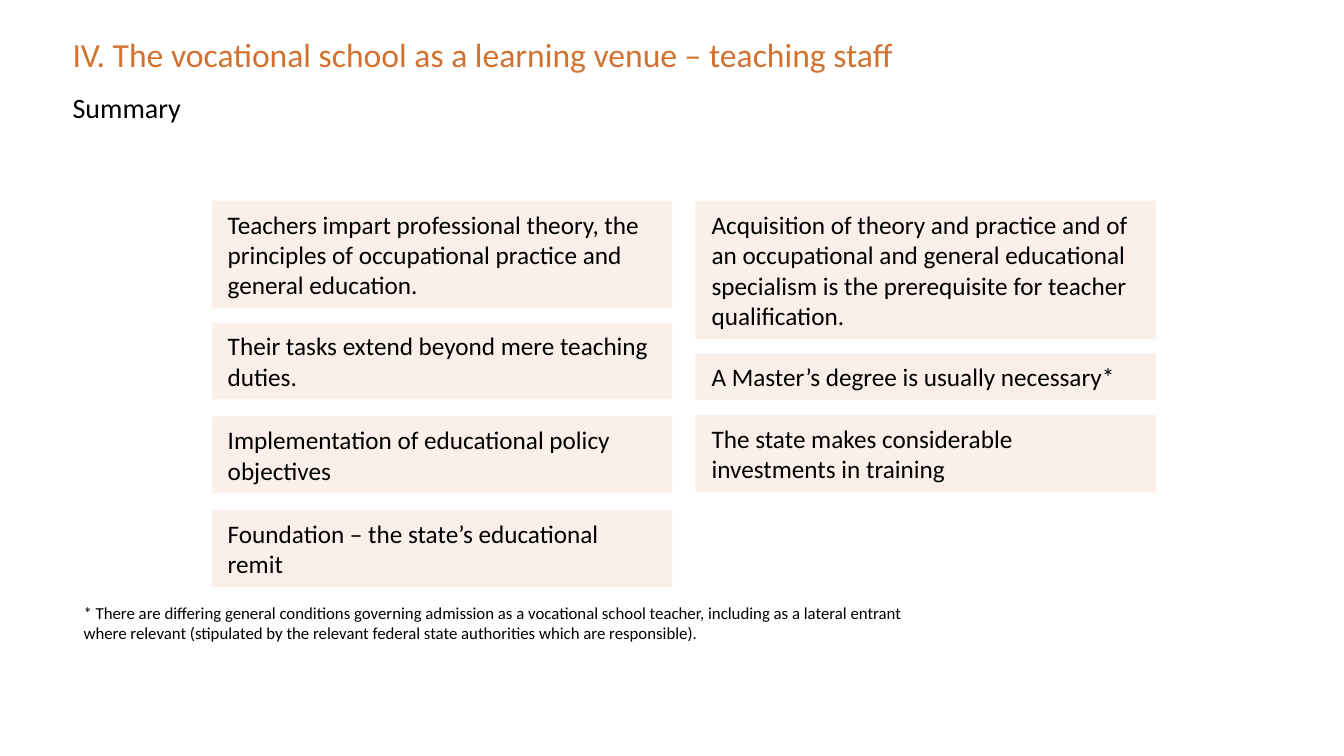
from dataclasses import dataclass

from pptx import Presentation
from pptx.dml.color import RGBColor
from pptx.enum.shapes import MSO_SHAPE
from pptx.enum.text import MSO_ANCHOR, MSO_AUTO_SIZE, PP_ALIGN
from pptx.oxml.ns import qn
from pptx.shapes.autoshape import Shape
from pptx.slide import Slide
from pptx.util import Pt
from lxml.etree import SubElement

ORANGE = "D37230"
BLACK = "000000"
TINT_ALPHA = 10  # percent
CARD_WIDTH = 329
CARD_PADDING = 11  # top and bottom together
LINE_HEIGHT = 22
LEFT_COLUMN, RIGHT_COLUMN = 151.2, 496.8


@dataclass
class Card:
    left: float
    top: float
    lines: int
    text: str

    @property
    def height(self) -> float:
        return CARD_PADDING + LINE_HEIGHT * self.lines


CARDS = [
    Card(LEFT_COLUMN, 143.3, 3, "Teachers impart professional theory, the principles of "
         "occupational practice and general education."),
    Card(LEFT_COLUMN, 230.4, 2, "Their tasks extend beyond mere teaching duties."),
    Card(LEFT_COLUMN, 297.4, 2, "Implementation of educational policy objectives"),
    Card(LEFT_COLUMN, 364.4, 2, "Foundation – the state’s educational remit"),
    Card(RIGHT_COLUMN, 143.3, 4, "Acquisition of theory and practice and of an occupational and "
         "general educational specialism is the prerequisite for teacher qualification."),
    Card(RIGHT_COLUMN, 252.7, 1, "A Master’s degree is usually necessary*"),
    Card(RIGHT_COLUMN, 296.6, 2, "The state makes considerable investments in training"),
]


def color(value: str) -> RGBColor:
    return RGBColor.from_string(value)


def write(box: Shape, text: str, size: float, ink: str = BLACK,
          anchor: MSO_ANCHOR = MSO_ANCHOR.TOP, inset_x: float = 0, inset_y: float = 0,
          auto_size: MSO_AUTO_SIZE = MSO_AUTO_SIZE.NONE) -> None:
    """Fill a box with one left-aligned paragraph."""
    frame_format = {
        "word_wrap": True, "auto_size": auto_size, "vertical_anchor": anchor,
        "margin_left": Pt(inset_x), "margin_right": Pt(inset_x),
        "margin_top": Pt(inset_y), "margin_bottom": Pt(inset_y),
    }
    for name, value in frame_format.items():
        setattr(box.text_frame, name, value)
    para = box.text_frame.paragraphs[0]
    para.alignment = PP_ALIGN.LEFT
    span = para.add_run()
    span.text = text
    for name, value in {"name": "Calibri", "size": Pt(size)}.items():
        setattr(span.font, name, value)
    span.font.color.rgb = color(ink)


def add_card(page: Slide, card: Card) -> None:
    box = page.shapes.add_shape(MSO_SHAPE.RECTANGLE, Pt(card.left), Pt(card.top),
                                Pt(CARD_WIDTH), Pt(card.height))
    box.shadow.inherit = False
    box.line.fill.background()
    box.fill.solid()
    box.fill.fore_color.rgb = color(ORANGE)
    tint = box.fill._xPr.find(qn("a:solidFill"))[0]
    SubElement(tint, qn("a:alpha"), val=str(TINT_ALPHA * 1000))
    write(box, card.text, 18, anchor=MSO_ANCHOR.MIDDLE, inset_x=11.5, inset_y=5.75,
          auto_size=MSO_AUTO_SIZE.SHAPE_TO_FIT_TEXT)


def main() -> None:
    deck = Presentation()
    deck.slide_width, deck.slide_height = Pt(960), Pt(540)
    page = deck.slides.add_slide(deck.slide_layouts[5])

    # Title and subtitle
    title = page.shapes.title
    place = {"left": 51.8, "top": 23, "width": 708.5, "height": 35.3}
    for name, value in place.items():
        setattr(title, name, Pt(value))
    write(title, "IV. The vocational school as a learning venue – teaching staff", 24, ORANGE,
          anchor=MSO_ANCHOR.MIDDLE)
    title.text_frame.paragraphs[0].line_spacing = 0.9
    subtitle = page.shapes.add_textbox(Pt(51.8), Pt(64.8), Pt(870.5), Pt(35.3))
    write(subtitle, "Summary", 20)

    # Footnote
    footnote = page.shapes.add_textbox(Pt(52.6), Pt(427), Pt(619.2), Pt(36))
    write(footnote, "* There are differing general conditions governing admission as a vocational "
          "school teacher, including as a lateral entrant where relevant (stipulated by the "
          "relevant federal state authorities which are responsible).", 12,
          inset_x=7.2, inset_y=3.6, auto_size=MSO_AUTO_SIZE.SHAPE_TO_FIT_TEXT)

    # Summary cards
    for card in CARDS:
        add_card(page, card)

    deck.save("out.pptx")


if __name__ == "__main__":
    main()
